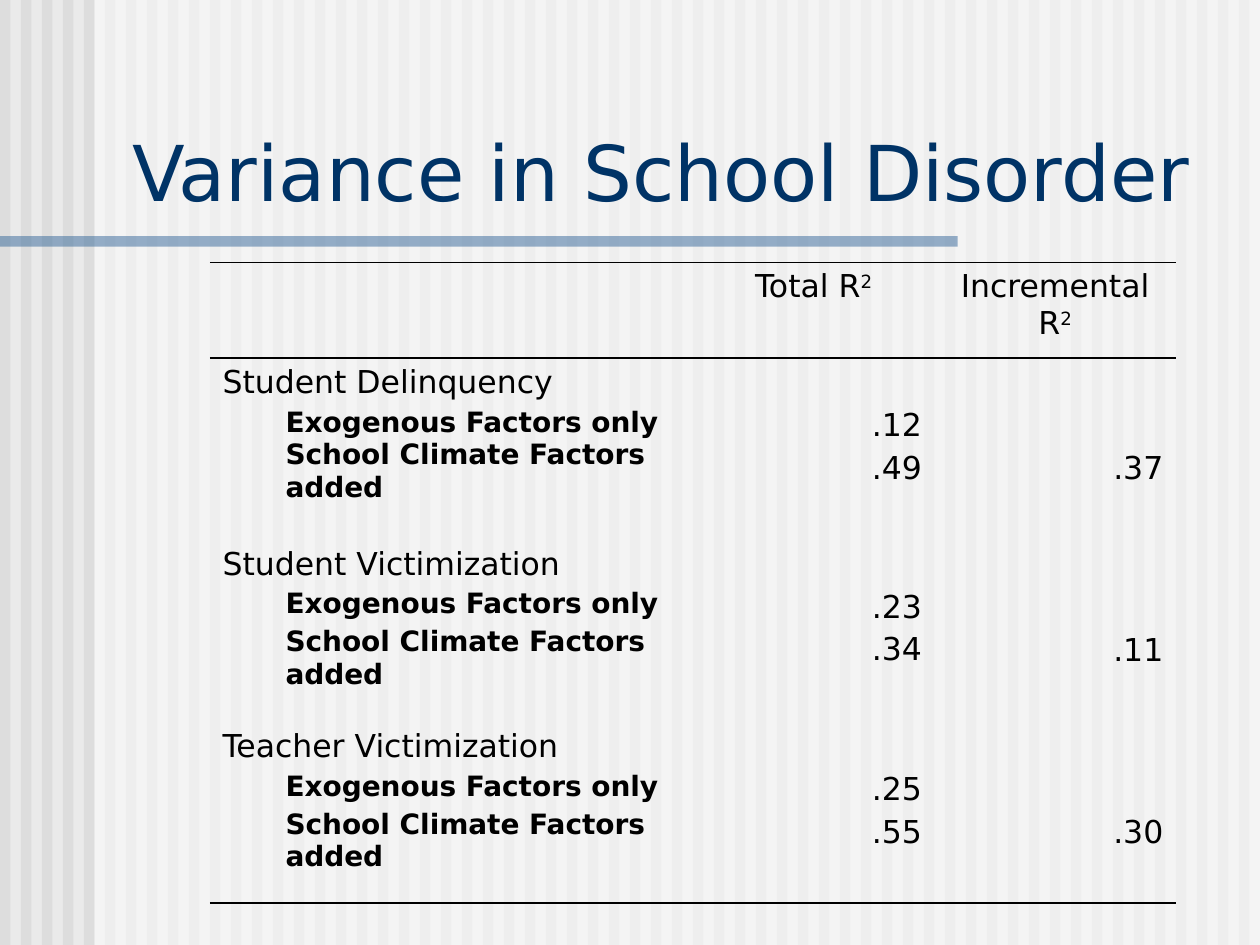
from lxml.etree import SubElement
from pptx import Presentation
from pptx.dml.color import RGBColor as RGB
from pptx.enum.shapes import MSO_SHAPE as Shape
from pptx.enum.text import MSO_ANCHOR as Anchor, PP_ALIGN as Align
from pptx.oxml import parse_xml
from pptx.oxml.ns import nsdecls, qn
from pptx.util import Inches, Pt

COLORS = {"background": "EAEAEA", "stripe": "DDDDDD", "veil": "FFFFFF",
          "bar": "336699", "title": "003366", "text": "000000"}
FONT = "DejaVu Sans"
NO_STYLE = "{2D5ABB26-0587-4C30-8999-92F81FD0307C}"

presentation = Presentation()
presentation.slide_width, presentation.slide_height = Inches(10), Inches(7.5)
slide = presentation.slides.add_slide(presentation.slide_layouts[6])
slide.background.fill.solid()
slide.background.fill.fore_color.rgb = RGB.from_string(COLORS["background"])

# The slide is a grid of 120 columns by 90 rows of square units.
UNIT = presentation.slide_width // 120


def add_block(left, top, width, height, color, alpha=None):
    """Add a borderless rectangle, in grid units, with alpha in percent."""
    shape = slide.shapes.add_shape(
        Shape.RECTANGLE, *(round(n * UNIT) for n in (left, top, width, height)))
    shape.shadow.inherit = False
    shape.line.fill.background()
    shape.fill.solid()
    shape.fill.fore_color.rgb = RGB.from_string(COLORS[color])
    if alpha:
        color_element = shape.fill._xPr.find(".//" + qn("a:srgbClr"))
        SubElement(color_element, qn("a:alpha"), val=str(alpha * 1000))


def write(frame, text, size=18, color="text", bold=False, align=Align.LEFT,
          superscript="", indent=0, spacing=0.2):
    """Write one paragraph, using the frame's empty first one if there is one."""
    paragraph = frame.paragraphs[0]
    if paragraph.runs:
        paragraph = frame.add_paragraph()
    paragraph.alignment = align
    paragraph.space_before = Pt(size * spacing)
    if indent:
        paragraph.level = 1
        properties = paragraph._p.get_or_add_pPr()
        properties.set("marL", str(indent * UNIT))
        properties.set("indent", "0")
    for part in filter(None, (text, superscript)):
        run = paragraph.add_run()
        run.text = part
        run.font.name, run.font.size, run.font.bold = FONT, Pt(size), bold
        run.font.color.rgb = RGB.from_string(COLORS[color])
    if superscript:
        run.font._element.set("baseline", "30000")


# Striped backdrop, veil and title bar
for stripe in range(60):
    add_block(2 * stripe, 0, 1, 90, "stripe")
add_block(9, 0, 111, 90, "veil", alpha=50)
add_block(0, 22.5, 91.2, 1, "bar", alpha=50)

title = slide.shapes.add_textbox(
    *(round(n * UNIT) for n in (11.4, 11.25, 107.2, 10))).text_frame
title.word_wrap = True
title.vertical_anchor = Anchor.BOTTOM
write(title, "Variance in School Disorder", size=44, color="title", spacing=0)

# Variance table
COLUMNS = [46, 23, 23]
ROWS = [9.1, 17.3, 17.4, 17.2]
FACTORS = ["Exogenous Factors only", "School Climate Factors added"]
OUTCOMES = [
    ("Student Delinquency", [" ".join(FACTORS)], [".12", ".49"], ".37"),
    ("Student Victimization", FACTORS, [".23", ".34"], ".11"),
    ("Teacher Victimization", FACTORS, [".25", ".55"], ".30"),
]
LINE = Pt(24.55)  # one 18 pt line with its spacing

frame = slide.shapes.add_table(
    len(ROWS), len(COLUMNS), 20 * UNIT, 25 * UNIT,
    sum(COLUMNS) * UNIT, round(sum(ROWS) * UNIT))
table = frame.table
table.first_row = table.horz_banding = False
table._tbl.tblPr.find(qn("a:tableStyleId")).text = NO_STYLE
for column, width in zip(table.columns, COLUMNS):
    column.width = width * UNIT
for row, height in zip(table.rows, ROWS):
    row.height = round(height * UNIT)

for column, heading in enumerate(["Total R", "Incremental R"], start=1):
    write(table.cell(0, column).text_frame, heading, superscript="2",
          align=Align.CENTER)

for row, (outcome, factors, totals, increment) in enumerate(OUTCOMES, start=1):
    label, total, gain = (table.cell(row, column) for column in range(3))
    write(label.text_frame, outcome)
    for factor in factors:
        write(label.text_frame, factor, size=16, bold=True, indent=6)
    total.margin_top = Inches(0.05) + LINE
    for value in totals:
        write(total.text_frame, value, align=Align.RIGHT)
    gain.margin_top = Inches(0.05) + 2 * LINE
    write(gain.text_frame, increment, align=Align.RIGHT)

# Rules above and below the heading and at the foot of the table
for row in range(len(ROWS)):
    ruled = {"T": row <= 1, "B": row in (0, len(ROWS) - 1)}
    for column in range(len(COLUMNS)):
        cell = table.cell(row, column)
        cell.fill.background()
        properties = cell._tc.get_or_add_tcPr()
        for position, side in enumerate("LRTB"):
            paint = "<a:noFill/>"
            if ruled.get(side):
                paint = (f'<a:solidFill><a:srgbClr val="{COLORS["text"]}"/>'
                         "</a:solidFill>")
            properties.insert(position, parse_xml(
                f'<a:ln{side} {nsdecls("a")} w="{Pt(1)}">{paint}</a:ln{side}>'))

presentation.save("out.pptx")
